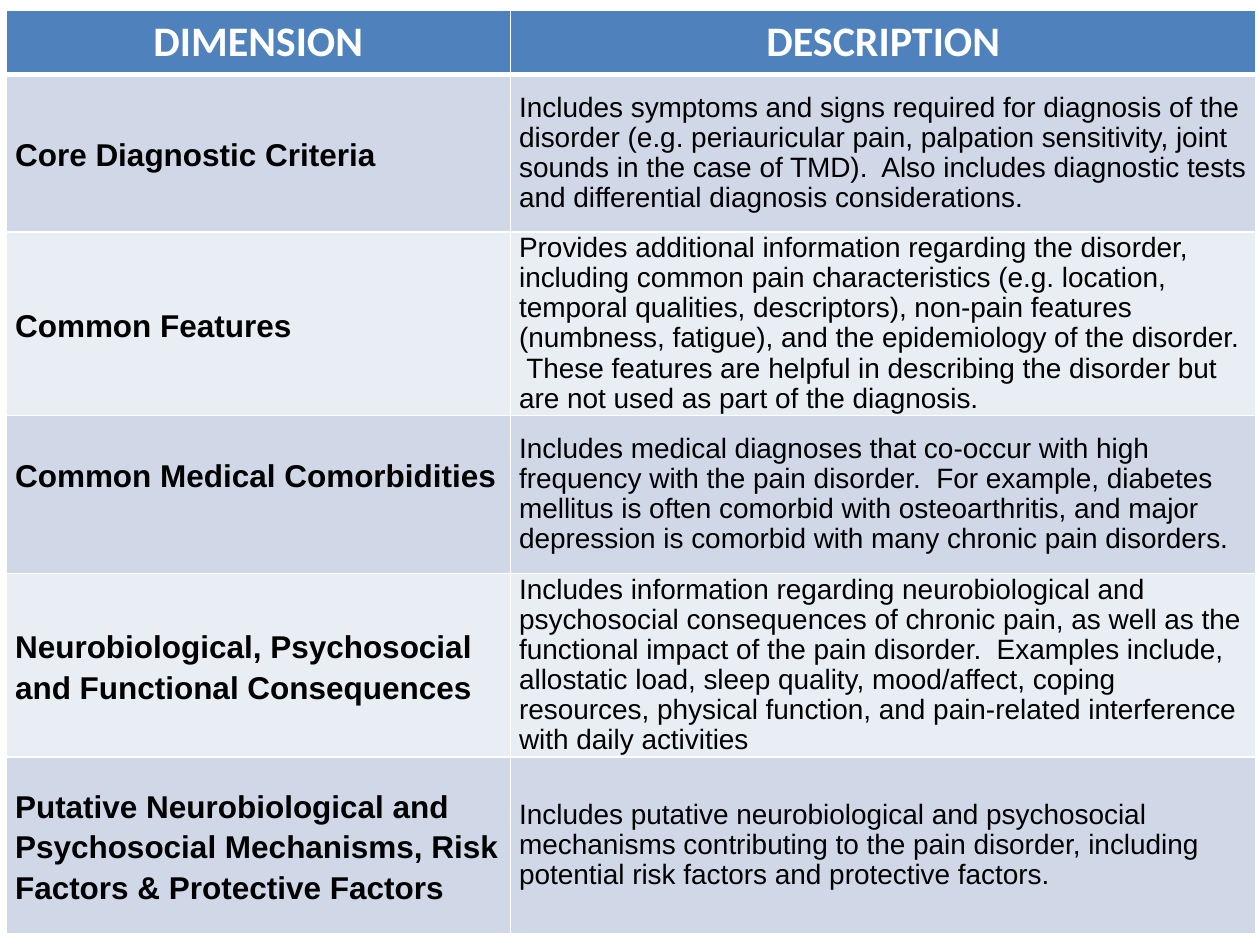
"""Build a slide with a table of the dimensions of pain diagnosis."""
import dataclasses

import lxml.etree
import pptx
import pptx.dml.color
import pptx.enum.text
import pptx.oxml.ns
import pptx.util

Inches = pptx.util.Inches
Pt = pptx.util.Pt
ALIGN = pptx.enum.text.PP_ALIGN
ANCHOR = pptx.enum.text.MSO_ANCHOR

HUES = {"head": "4F81BD", "odd": "D0D8E8", "even": "E9EDF4",
        "white": "FFFFFF", "black": "000000"}
COLS = (4, 5.92)


@dataclasses.dataclass
class Row:
    name: str
    text: str
    height: float
    lift: float = 0


ROWS = [
    Row("Core Diagnostic Criteria",
        "Includes symptoms and signs required for diagnosis of the disorder "
        "(e.g. periauricular pain, palpation sensitivity, joint sounds in the "
        "case of TMD).  Also includes diagnostic tests and differential "
        "diagnosis considerations.", 1.25),
    Row("Common Features",
        "Provides additional information regarding the disorder, including "
        "common pain characteristics (e.g. location, temporal qualities, "
        "descriptors), non-pain features (numbness, fatigue), and the "
        "epidemiology of the disorder.   These features are helpful in "
        "describing the disorder but are not used as part of the diagnosis.",
        1.46),
    Row("Common Medical Comorbidities",
        "Includes medical diagnoses that co-occur with high frequency with the "
        "pain disorder.  For example, diabetes mellitus is often comorbid with "
        "osteoarthritis, and major depression is comorbid with many chronic "
        "pain disorders.", 1.25, lift=0.32),
    Row("Neurobiological, Psychosocial and Functional Consequences",
        "Includes information regarding neurobiological and psychosocial "
        "consequences of chronic pain, as well as the functional impact of the "
        "pain disorder.  Examples include, allostatic load, sleep quality, "
        "mood/affect, coping resources, physical function, and pain-related "
        "interference with daily activities", 1.46),
    Row("Putative Neurobiological and Psychosocial Mechanisms, Risk Factors "
        "& Protective Factors",
        "Includes putative neurobiological and psychosocial mechanisms "
        "contributing to the pain disorder, including potential risk factors "
        "and protective factors.", 1.4),
]


def tint(hue: str) -> pptx.dml.color.RGBColor:
    """Return the named colour."""
    return pptx.dml.color.RGBColor.from_string(HUES[hue])


def edge(cell, top: float, low: float) -> None:
    """Draw white borders round a cell."""
    qn = pptx.oxml.ns.qn
    props = cell._tc.get_or_add_tcPr()
    for side, width in (("L", 1), ("R", 1), ("T", top), ("B", low)):
        line = lxml.etree.SubElement(props, qn(f"a:ln{side}"), w=str(Pt(width)))
        fill = lxml.etree.SubElement(line, qn("a:solidFill"))
        lxml.etree.SubElement(fill, qn("a:srgbClr"), val=HUES["white"])


def write(cell, text: str, *, size: float, font: str = "Arial",
          hue: str = "black", bold: bool = False, align=ALIGN.LEFT,
          space=None) -> None:
    """Put formatted text in a cell."""
    para = cell.text_frame.paragraphs[0]
    para.alignment = align
    para.line_spacing = space
    run = para.add_run()
    run.text = text
    run.font.size = Pt(size)
    run.font.name = font
    run.font.bold = bold
    run.font.color.rgb = tint(hue)


def paint(cell, hue: str) -> None:
    """Fill a cell with the named colour."""
    cell.fill.solid()
    cell.fill.fore_color.rgb = tint(hue)


def pad(cell, lift: float = 0) -> None:
    """Centre the text of a cell between narrow margins."""
    cell.vertical_anchor = ANCHOR.MIDDLE
    cell.margin_left = cell.margin_right = Inches(0.07)
    cell.margin_top = 0
    cell.margin_bottom = Inches(lift)


def main() -> None:
    """Build and save the slide."""
    deck = pptx.Presentation()
    deck.slide_width, deck.slide_height = Inches(10), Inches(7.5)
    slide = deck.slides.add_slide(deck.slide_layouts[6])
    table = slide.shapes.add_table(
        len(ROWS) + 1, len(COLS), Inches(0.05), Inches(0.08),
        Inches(sum(COLS)), Inches(7.33)).table
    for col, width in zip(table.columns, COLS):
        col.width = Inches(width)

    table.rows[0].height = Inches(0.51)
    for cell, text in zip(table.rows[0].cells, ("DIMENSION", "DESCRIPTION")):
        edge(cell, 1, 3)
        paint(cell, "head")
        write(cell, text, size=24, font="Calibri", hue="white", bold=True,
              align=ALIGN.CENTER)

    for num, row in enumerate(ROWS, 1):
        table.rows[num].height = Inches(row.height)
        name, text = table.rows[num].cells
        for cell in (name, text):
            edge(cell, 3 if num == 1 else 1, 1)
            paint(cell, "odd" if num % 2 else "even")
        pad(name, row.lift)
        pad(text)
        write(name, row.name, size=18, bold=True, space=1.15)
        write(text, row.text, size=16, space=Pt(17.2))

    deck.save("out.pptx")


if __name__ == "__main__":
    main()
